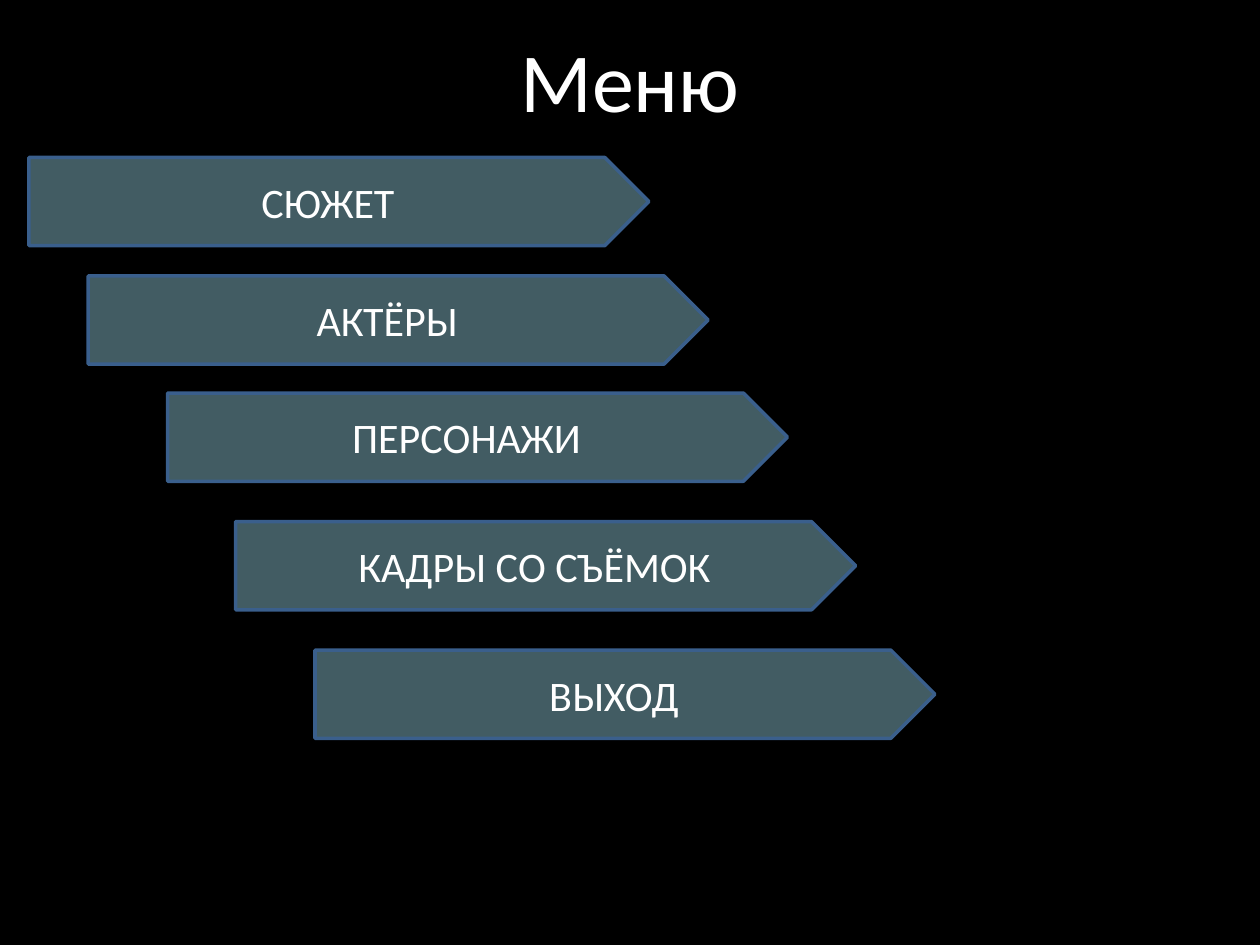
import pptx
import pptx.util
import pptx.dml.color
import pptx.enum.shapes
import pptx.enum.text
import pptx.oxml.ns
from lxml import etree

Inches = pptx.util.Inches
RGBColor = pptx.dml.color.RGBColor
BLACK = RGBColor(0x00, 0x00, 0x00)
WHITE = RGBColor(0xFF, 0xFF, 0xFF)
AQUA = RGBColor(0x93, 0xCD, 0xDD)
BLUE = RGBColor(0x3A, 0x5F, 0x8C)

# Menu entries with their left and top
MENU = [
    ("СЮЖЕТ", 0.23, 1.25),
    ("АКТЁРЫ", 0.7, 2.19),
    ("ПЕРСОНАЖИ", 1.33, 3.12),
    ("КАДРЫ СО СЪЁМОК", 1.87, 4.14),
    ("ВЫХОД", 2.5, 5.16),
]


class Deck:
    font = {"name": "Calibri", "bold": False}

    def __init__(self, wide, high):
        self.prs = pptx.Presentation()
        self.prs.slide_width = Inches(wide)
        self.prs.slide_height = Inches(high)
        self.slide = self.prs.slides.add_slide(self.prs.slide_layouts[5])
        fill = self.slide.background.fill
        fill.solid()
        fill.fore_color.rgb = BLACK

    def label(self, shape, text, size):
        frame = shape.text_frame
        frame.text = text
        frame.word_wrap = True
        frame.vertical_anchor = pptx.enum.text.MSO_ANCHOR.MIDDLE
        para = frame.paragraphs[0]
        para.alignment = pptx.enum.text.PP_ALIGN.CENTER
        font = para.runs[0].font
        for key, value in {**self.font, "size": pptx.util.Pt(size)}.items():
            setattr(font, key, value)
        font.color.rgb = WHITE

    def title(self, text, left, top, width, height):
        shape = self.slide.shapes.title
        place = {"left": left, "top": top, "width": width, "height": height}
        for key, value in place.items():
            setattr(shape, key, Inches(value))
        self.label(shape, text, 48)

    def arrow(self, text, left, top, width=4.92, height=0.7):
        shape = self.slide.shapes.add_shape(
            pptx.enum.shapes.MSO_SHAPE.PENTAGON,
            Inches(left), Inches(top), Inches(width), Inches(height))
        shape.shadow.inherit = False
        shape.fill.solid()
        shape.fill.fore_color.rgb = AQUA
        # Let the background show through at 45 % opacity
        qn = pptx.oxml.ns.qn
        color = next(shape.element.spPr.iter(qn("a:srgbClr")))
        etree.SubElement(color, qn("a:alpha"), val="45000")
        shape.line.color.rgb = BLUE
        shape.line.width = pptx.util.Pt(2)
        self.label(shape, text, 24)


def main():
    deck = Deck(10, 7.5)
    # Heading
    deck.title("Меню", 0, 0, 10, 1.25)
    # Staircase of menu arrows
    for text, left, top in MENU:
        deck.arrow(text, left, top)
    deck.prs.save("out.pptx")


if __name__ == "__main__":
    main()
